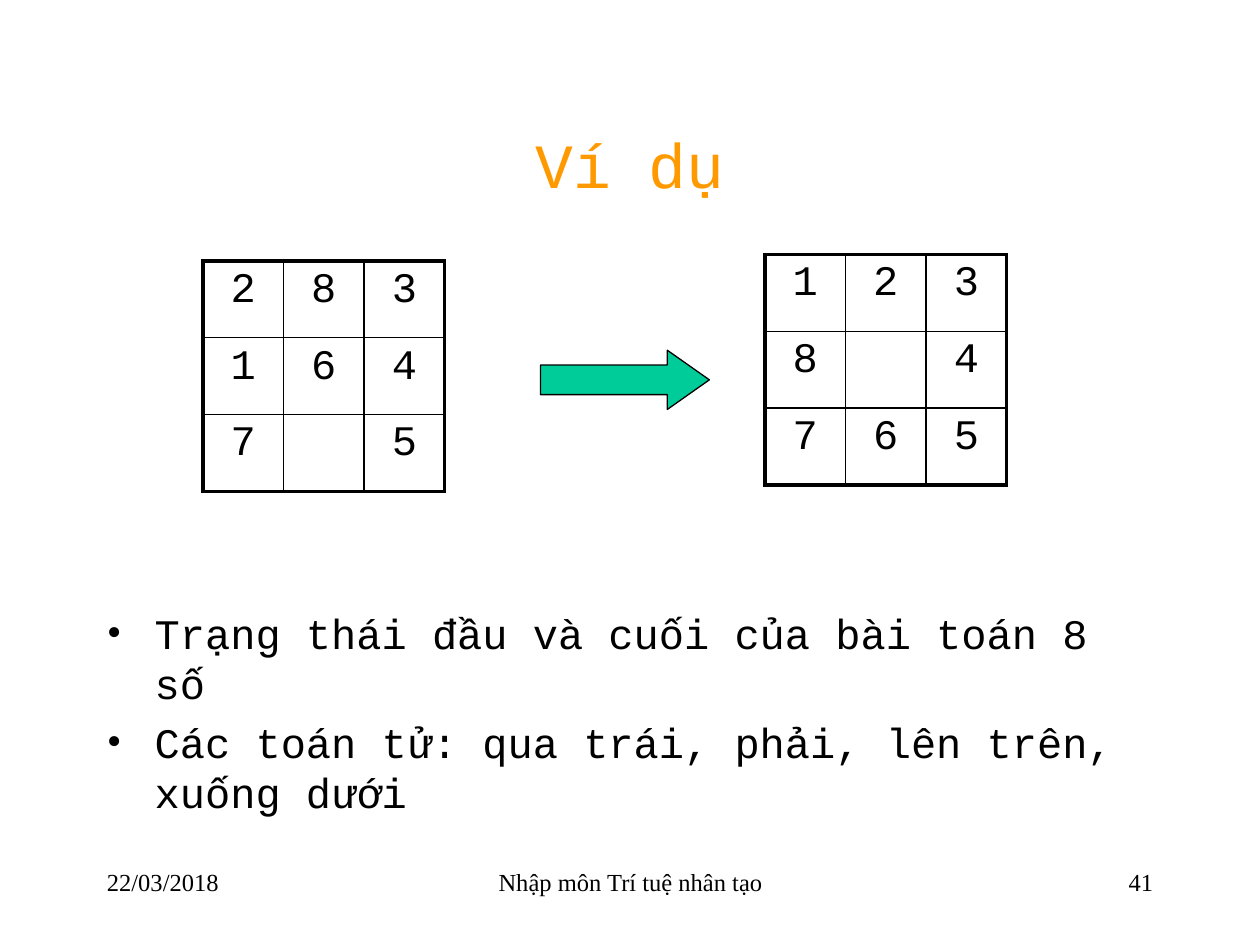
from lxml import etree
from pptx import Presentation
from pptx import util as u
from pptx.dml.color import RGBColor
from pptx.enum import shapes, text
from pptx.oxml.ns import qn

# Content
TITLE = "Ví dụ"
NOTES = [
    "Trạng thái đầu và cuối của bài toán 8 số",
    "Các toán tử: qua trái, phải, lên trên, xuống dưới",
]
BOARDS = [  # left, top, rows of tiles
    (1.61, 2.07, ["283", "164", "7 5"]),
    (6.07, 2.02, ["123", "8 4", "765"]),
]
AL = text.PP_ALIGN
FOOTER = [  # left, width, words, alignment
    (0.75, 2.08, "22/03/2018", AL.LEFT),
    (3.42, 3.17, "Nhập môn Trí tuệ nhân tạo", AL.CENTER),
    (7.17, 2.08, "41", AL.RIGHT),
]
COLORS = {"ink": "000000", "title": "FF9900", "arrow": "00CC99"}
MONO, SERIF = "Courier New", "Times New Roman"
TILE_W, TILE_H = 0.64, 0.61
THICK, THIN = 2.25, 1


def color(name):
    return RGBColor.from_string(COLORS[name])


def write(para, words, size, font, ink="ink", align=AL.LEFT):
    para.alignment = align
    run = para.add_run()
    run.text = words
    run.font.size = u.Pt(size)
    run.font.name = font
    run.font.color.rgb = color(ink)


def add_box(slide, *area):
    frame = slide.shapes.add_textbox(*map(u.Inches, area)).text_frame
    frame.word_wrap = True
    return frame


def space(para):
    """Leave 20% of a line before the paragraph."""
    before = etree.SubElement(para._p.get_or_add_pPr(), qn("a:spcBef"))
    etree.SubElement(before, qn("a:spcPct"), val="20000")


def bullet(para):
    props = para._p.get_or_add_pPr()
    props.set("marL", str(u.Inches(0.38)))
    props.set("indent", str(u.Inches(-0.38)))
    etree.SubElement(props, qn("a:buFont"), typeface=SERIF)
    etree.SubElement(props, qn("a:buChar"), char="•")


def border(cell, sides):
    props = cell._tc.get_or_add_tcPr()
    for i, (side, width) in enumerate(sides):
        line = etree.Element(qn("a:ln" + side), w=str(u.Pt(width)))
        fill = etree.SubElement(line, qn("a:solidFill"))
        etree.SubElement(fill, qn("a:srgbClr"), val=COLORS["ink"])
        props.insert(i, line)


def add_board(slide, left, top, tiles):
    n = len(tiles)
    area = (left, top, n * TILE_W, n * TILE_H)
    table = slide.shapes.add_table(n, n, *map(u.Inches, area)).table
    table.first_row = table.horz_banding = False
    for i in range(n):
        table.columns[i].width = u.Inches(TILE_W)
        table.rows[i].height = u.Inches(TILE_H)
    for r, row in enumerate(tiles):
        for c, tile in enumerate(row):
            cell = table.cell(r, c)
            cell.fill.background()
            # Thick lines on the outer edge only
            edges = [("L", c == 0), ("R", c == n - 1),
                     ("T", r == 0), ("B", r == n - 1)]
            border(cell, [(s, THICK if out else THIN) for s, out in edges])
            if tile != " ":
                para = cell.text_frame.paragraphs[0]
                write(para, tile, 24, MONO, align=AL.CENTER)
                space(para)


def main():
    prs = Presentation()
    prs.slide_width, prs.slide_height = u.Inches(10), u.Inches(7.5)
    slide = prs.slides.add_slide(prs.slide_layouts[6])

    # Footer
    for left, width, words, align in FOOTER:
        frame = add_box(slide, left, 6.83, width, 0.5)
        write(frame.paragraphs[0], words, 14, SERIF, align=align)

    # Title
    frame = add_box(slide, 0.75, 0.67, 8.5, 1.25)
    frame.vertical_anchor = text.MSO_ANCHOR.MIDDLE
    write(frame.paragraphs[0], TITLE, 36, MONO, "title", AL.CENTER)

    # Bulleted notes
    frame = add_box(slide, 0.75, 4.77, 8.5, 1.34)
    for i, words in enumerate(NOTES):
        para = frame.add_paragraph() if i else frame.paragraphs[0]
        write(para, words, 24, MONO)
        space(para)
        bullet(para)

    # Start and goal boards
    for board in BOARDS:
        add_board(slide, *board)

    # Arrow between the boards
    arrow = slide.shapes.add_shape(
        shapes.MSO_SHAPE.RIGHT_ARROW, *map(u.Inches, (4.29, 2.78, 1.34, 0.47)))
    arrow.adjustments[0], arrow.adjustments[1] = 0.5, 0.71
    arrow.shadow.inherit = False
    arrow.fill.solid()
    arrow.fill.fore_color.rgb = color("arrow")
    arrow.line.color.rgb = color("ink")
    arrow.line.width = u.Pt(0.75)

    prs.save("out.pptx")


if __name__ == "__main__":
    main()
